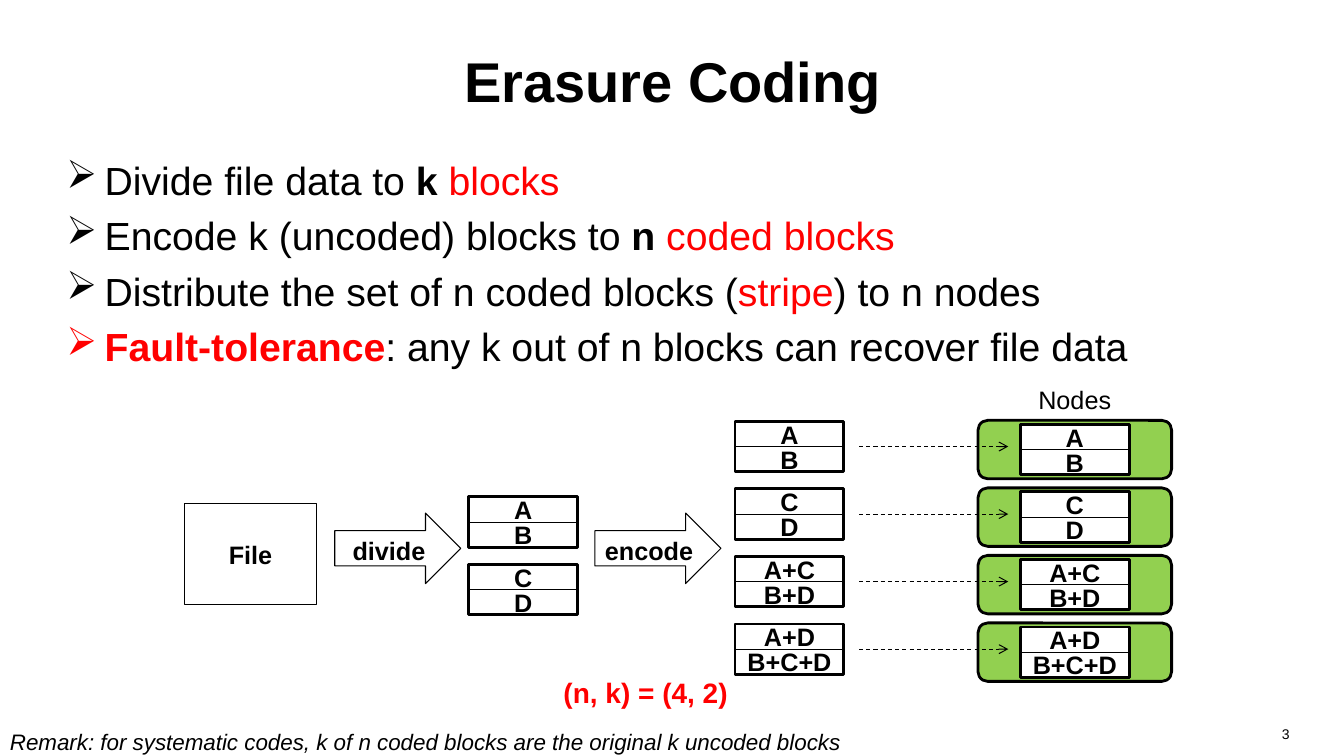
from lxml.etree import SubElement
from pptx import Presentation
from pptx.dml.color import RGBColor
from pptx.enum.dml import MSO_LINE_DASH_STYLE as Dash
from pptx.enum.shapes import MSO_CONNECTOR as Connector, MSO_SHAPE as Shape
from pptx.enum.text import MSO_ANCHOR as Anchor, MSO_AUTO_SIZE as AutoSize, PP_ALIGN as Align
from pptx.oxml.ns import qn
from pptx.util import Emu, Pt

EMU_PER_PX = 9144  # 100 px to the inch
FONT = "Arial"
COLORS = {"black": "000000", "red": "FF0000", "green": "92D050", "white": "FFFFFF"}
THIN, THICK = 0.75, 2
ROW_PITCH = 67
BLOCK_WIDTH, CELL_HEIGHT = 108, 25

BULLETS = [
    [("Divide file data to ", "black", False), ("k ", "black", True), ("blocks", "red", False)],
    [("Encode k (uncoded) blocks to ", "black", False), ("n ", "black", True),
     ("coded blocks", "red", False)],
    [("Distribute the set of n coded blocks (", "black", False), ("stripe", "red", False),
     (") to n nodes", "black", False)],
    [("Fault-tolerance", "red", True),
     (": any k out of n blocks can recover file data", "black", False)],
]
CODED_BLOCKS = [("A", "B"), ("C", "D"), ("A+C", "B+D"), ("A+D", "B+C+D")]
UNCODED_BLOCKS = CODED_BLOCKS[:2]


def px(length):
    return Emu(length * EMU_PER_PX)


def rgb(name):
    return RGBColor.from_string(COLORS[name])


class SlideBuilder:
    """Holds the current slide and draws styled elements on it."""

    def __init__(self, page):
        self.page = page
        self.shapes = page.shapes

    def span(self, para, text, size, color="black", bold=False, italic=False):
        span = para.add_run()
        span.text = text
        font = span.font
        font.name, font.size = FONT, Pt(size)
        font.bold, font.italic = bold, italic
        font.color.rgb = rgb(color)

    def title(self, text, left, top, width, height):
        box = self.shapes.title
        box.left, box.top, box.width, box.height = map(px, (left, top, width, height))
        box.text_frame.vertical_anchor = Anchor.MIDDLE
        para = box.text_frame.paragraphs[0]
        para.alignment = Align.CENTER
        self.span(para, text, 40, bold=True)

    def label(self, text, left, top, width, height, size, align=Align.LEFT, **style):
        box = self.shapes.add_textbox(*map(px, (left, top, width, height)))
        box.text_frame.word_wrap = False
        box.text_frame.auto_size = AutoSize.NONE
        para = box.text_frame.paragraphs[0]
        para.alignment = align
        self.span(para, text, size, **style)

    def bullets(self, items, left, top, width, height):
        box = self.shapes.add_textbox(*map(px, (left, top, width, height)))
        frame = box.text_frame
        frame.word_wrap = True
        for index, item in enumerate(items):
            para = frame.add_paragraph() if index else frame.paragraphs[0]
            para.space_before = Pt(6)
            properties = para._p.get_or_add_pPr()
            properties.set("marL", str(px(38)))
            properties.set("indent", str(-px(38)))
            SubElement(properties, qn("a:buChar"), char="➢")
            for text, color, bold in item:
                self.span(para, text, 28, color, bold)

    def shape(self, kind, left, top, width, height, text="", fill=None, line=THIN,
              anchor=Anchor.MIDDLE, inset=0):
        shape = self.shapes.add_shape(kind, *map(px, (left, top, width, height)))
        shape.shadow.inherit = False
        if fill:
            shape.fill.solid()
            shape.fill.fore_color.rgb = rgb(fill)
        else:
            shape.fill.background()
        shape.line.color.rgb = rgb("black")
        shape.line.width = Pt(line)
        if text:
            frame = shape.text_frame
            frame.word_wrap = False
            frame.vertical_anchor = anchor
            frame.margin_left = frame.margin_right = 0
            frame.margin_top = frame.margin_bottom = px(inset)
            para = frame.paragraphs[0]
            para.alignment = Align.CENTER
            self.span(para, text, 18, bold=True)

    def step_arrow(self, text, left):
        self.shape(Shape.RIGHT_ARROW, left, 509, 125, 70, text, anchor=Anchor.TOP, inset=5)

    def block(self, cells, left, top, fill=None):
        """Stack the cells and frame them with a thick outline."""
        for row, text in enumerate(cells):
            self.shape(Shape.RECTANGLE, left, top + row * CELL_HEIGHT,
                       BLOCK_WIDTH, CELL_HEIGHT, text, fill)
        self.shape(Shape.RECTANGLE, left, top, BLOCK_WIDTH, len(cells) * CELL_HEIGHT, line=THICK)

    def dashed_arrow(self, left, right, y):
        arrow = self.shapes.add_connector(Connector.STRAIGHT, *map(px, (left, y, right, y)))
        arrow.line.color.rgb = rgb("black")
        arrow.line.width = Pt(THIN)
        arrow.line.dash_style = Dash.DASH
        SubElement(arrow.line._get_or_add_ln(), qn("a:tailEnd"), type="arrow")
        SubElement(arrow._element.spPr, qn("a:effectLst"))


def main():
    deck = Presentation()
    deck.slide_width, deck.slide_height = px(1333), px(750)
    slide = SlideBuilder(deck.slides.add_slide(deck.slide_layouts[5]))

    slide.title("Erasure Coding", 67, 17, 1200, 125)
    slide.bullets(BULLETS, 56, 150, 1255, 226)
    slide.label("3", 978, 715, 311, 35, 10, Align.RIGHT)
    slide.label("Nodes", 1020, 376, 93, 40, 18)
    slide.label("(n, k) = (4, 2)", 549, 665, 184, 44, 20, color="red", bold=True)

    slide.shape(Shape.RECTANGLE, 183, 500, 131, 100, "File")
    slide.step_arrow("divide", 332)
    slide.step_arrow("encode", 590)
    for row, cells in enumerate(UNCODED_BLOCKS):
        slide.block(cells, 465, 493 + row * ROW_PITCH)
    for row, cells in enumerate(CODED_BLOCKS):
        offset = row * ROW_PITCH
        slide.shape(Shape.ROUNDED_RECTANGLE, 970, 417 + offset, 192, 58,
                    fill="green", line=THICK)
        slide.dashed_arrow(852, 1000, 443 + offset)
        slide.block(cells, 729, 418 + offset, "white")
        slide.block(cells, 1012, 421 + offset, "white")

    slide.label("Remark: for systematic codes, k of n coded blocks are the original k uncoded blocks",
                0, 717, 855, 37, 16, italic=True)
    deck.save("out.pptx")


if __name__ == "__main__":
    main()
